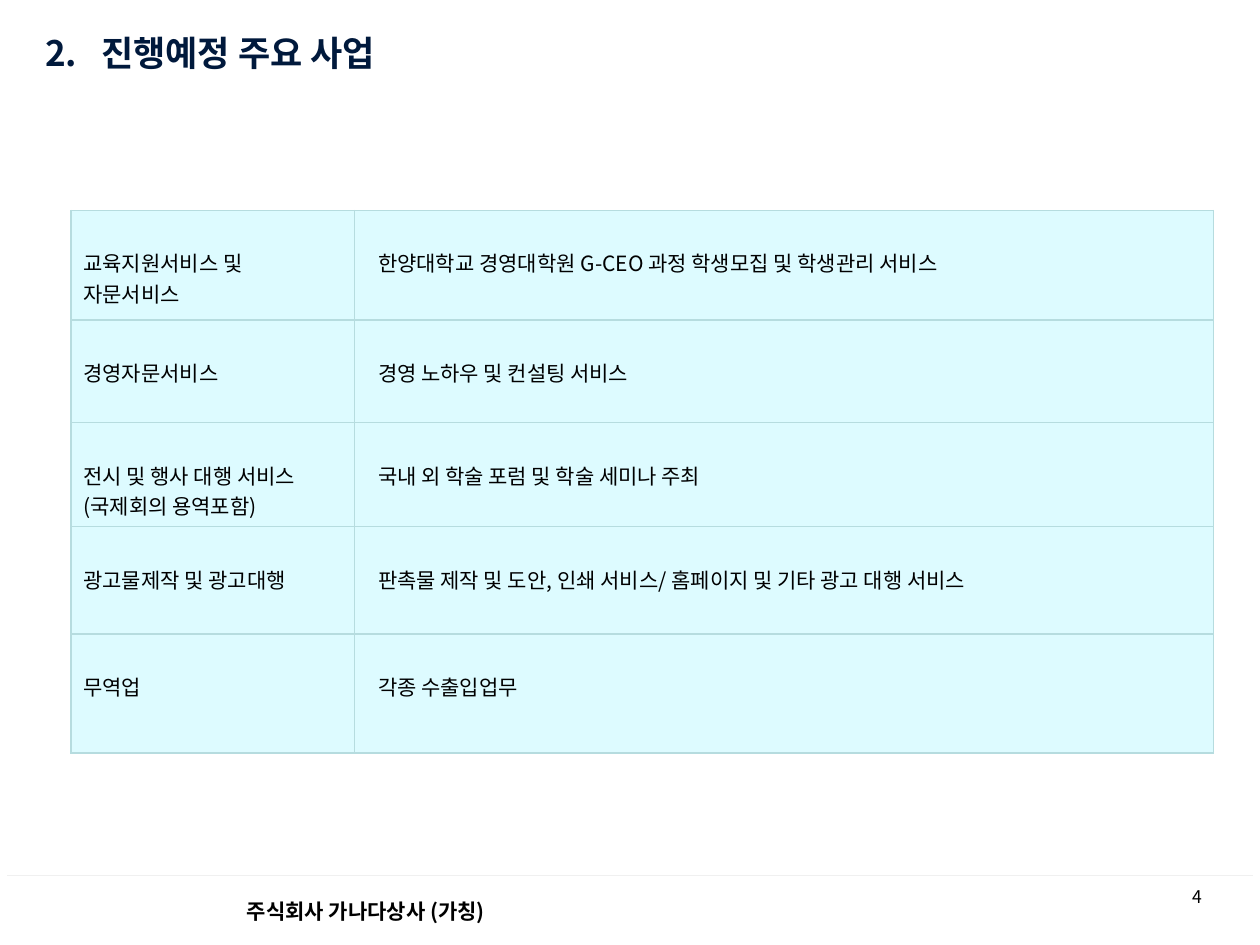
import pptx
import pptx.util
import pptx.dml.color
import pptx.enum.shapes
import pptx.enum.text
import pptx.oxml
import pptx.oxml.ns

Cm = pptx.util.Cm
Pt = pptx.util.Pt
ANCHOR = pptx.enum.text.MSO_ANCHOR
ALIGN = pptx.enum.text.PP_ALIGN

ROWS = [
    ("교육지원서비스 및\n자문서비스", "한양대학교 경영대학원 G-CEO 과정 학생모집 및 학생관리 서비스"),
    ("경영자문서비스", "경영 노하우 및 컨설팅 서비스"),
    ("전시 및 행사 대행 서비스\n(국제회의 용역포함)", "국내 외 학술 포럼 및 학술 세미나 주최"),
    ("광고물제작 및 광고대행", "판촉물 제작 및 도안, 인쇄 서비스/ 홈페이지 및 기타 광고 대행 서비스"),
    ("무역업", "각종 수출입업무"),
]


def color(value):
    return pptx.dml.color.RGBColor.from_string(value)


class Deck:
    """Style and current slide, with a method for each kind of element."""

    font = "Noto Sans CJK KR"
    ink = "000000"
    navy = "00193C"
    paper = "FFFFFF"
    rule = "F0F0F0"
    cell_fill = "DDFBFF"
    border = "B6DCDF"

    def __init__(self, width, height):
        self.prs = pptx.Presentation()
        self.prs.slide_width, self.prs.slide_height = Cm(width), Cm(height)
        self.slide = self.prs.slides.add_slide(self.prs.slide_layouts[6])

    def format(self, tf, size, ink, bold=False, align=ALIGN.LEFT):
        for p in tf.paragraphs:
            p.alignment = align
            for r in p.runs:
                r.font.name = self.font
                r.font.size = Pt(size)
                r.font.bold = bold
                r.font.color.rgb = color(ink)
                ea = pptx.oxml.parse_xml(
                    f'<a:ea {pptx.oxml.ns.nsdecls("a")} typeface="{self.font}"/>')
                r.font._element.find(pptx.oxml.ns.qn("a:latin")).addnext(ea)

    def line(self, x1, y1, x2, y2):
        sp = self.slide.shapes.add_connector(
            pptx.enum.shapes.MSO_CONNECTOR.STRAIGHT, Cm(x1), Cm(y1), Cm(x2), Cm(y2))
        sp.line.color.rgb = color(self.rule)
        sp.line.width = Pt(0.75)
        sp._element.spPr.append(
            pptx.oxml.parse_xml(f'<a:effectLst {pptx.oxml.ns.nsdecls("a")}/>'))

    def text(self, text, box, size, ink, bold=False, align=ALIGN.LEFT,
             anchor=ANCHOR.TOP, hang=0):
        tf = self.slide.shapes.add_textbox(*map(Cm, box)).text_frame
        tf.word_wrap = True
        tf.vertical_anchor = anchor
        tf.text = text
        if hang:
            pPr = tf.paragraphs[0]._p.get_or_add_pPr()
            pPr.set("marL", str(Cm(hang)))
            pPr.set("indent", str(-Cm(hang)))
        self.format(tf, size, ink, bold, align)

    def footer(self, text, box, inset):
        sp = self.slide.shapes.add_shape(
            pptx.enum.shapes.MSO_SHAPE.RECTANGLE, *map(Cm, box))
        sp.shadow.inherit = False
        sp.fill.solid()
        sp.fill.fore_color.rgb = color(self.paper)
        sp.line.fill.background()
        tf = sp.text_frame
        tf.word_wrap = False
        tf.margin_left = Cm(inset)
        tf.vertical_anchor = ANCHOR.MIDDLE
        tf.text = text
        self.format(tf, 12, self.ink, bold=True)

    def borders(self, cell):
        tcPr = cell._tc.get_or_add_tcPr()
        for i, side in enumerate(("lnL", "lnR", "lnT", "lnB")):
            tcPr.insert(i, pptx.oxml.parse_xml(
                f'<a:{side} {pptx.oxml.ns.nsdecls("a")} w="{Pt(0.75)}"><a:solidFill>'
                f'<a:srgbClr val="{self.border}"/></a:solidFill></a:{side}>'))

    def table(self, rows, left, top, widths, heights, insets):
        table = self.slide.shapes.add_table(
            len(rows), len(widths), Cm(left), Cm(top),
            Cm(sum(widths)), Cm(sum(heights))).table
        table.first_row = table.horz_banding = False
        for column, width in zip(table.columns, widths):
            column.width = Cm(width)
        for row, height, texts in zip(table.rows, heights, rows):
            row.height = Cm(height)
            for cell, text, inset in zip(row.cells, texts, insets):
                cell.fill.solid()
                cell.fill.fore_color.rgb = color(self.cell_fill)
                self.borders(cell)
                cell.margin_left = Cm(inset)
                cell.margin_top = Cm(0.75)
                cell.margin_bottom = Cm(0.05)
                cell.text_frame.text = text
                self.format(cell.text_frame, 12, self.ink)


def main():
    deck = Deck(25.4, 19.05)
    deck.line(0.15, 17.65, 25.25, 17.65)
    deck.text("4", (23.55, 17.73, 1.19, 0.79), 10, deck.ink, align=ALIGN.CENTER)
    deck.footer("주식회사 가나다상사 (가칭)", (0, 17.75, 19.69, 1.22), 4.98)
    deck.text("2.\t진행예정 주요 사업", (0.66, 0.33, 18.24, 1.47), 20, deck.navy,
              bold=True, anchor=ANCHOR.MIDDLE, hang=1.13)
    deck.table(ROWS, 1.43, 4.24, (5.71, 17.33), (2.21, 2.07, 2.1, 2.16, 2.4),
               (0.25, 0.48))
    deck.prs.save("out.pptx")


if __name__ == "__main__":
    main()
